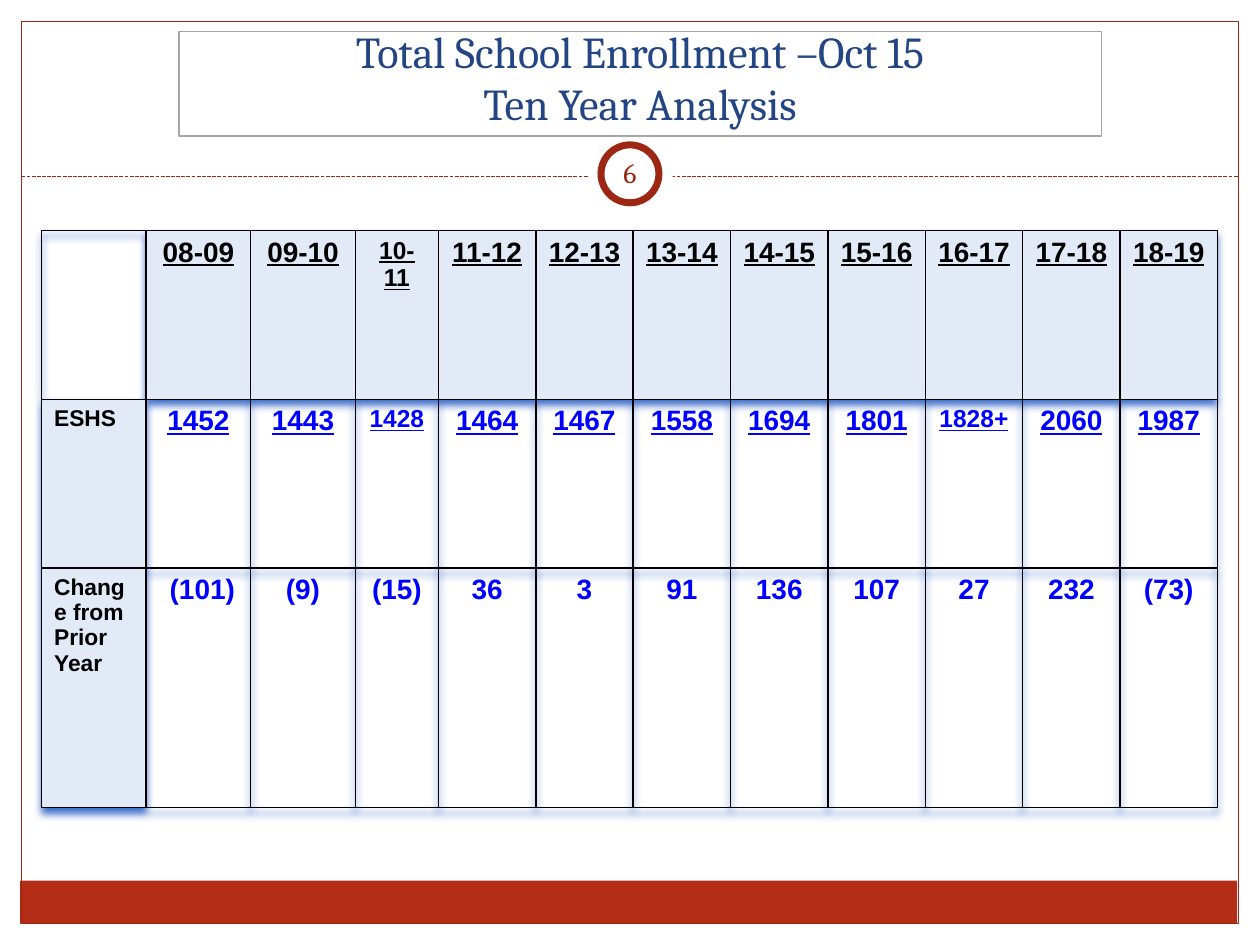
from dataclasses import dataclass

from lxml import etree
from pptx import Presentation
from pptx import util as u
from pptx.dml.color import RGBColor
from pptx.enum import dml, shapes, text
from pptx.oxml import parse_xml
from pptx.oxml.ns import nsdecls, qn

Inches, Pt = u.Inches, u.Pt


@dataclass(frozen=True)
class Theme:
    white: str = "FFFFFF"
    black: str = "000000"
    brick: str = "B32C16"
    rust: str = "9E2713"
    grey: str = "A6A6A6"
    navy: str = "244583"
    blue: str = "0000FF"
    pale: str = "E3EAF7"
    shadow: str = "3B6CC8"
    heading_font: str = "Cambria"
    table_font: str = "Arial"
    title: float = 25.2
    number: float = 16
    body: float = 16
    tight: float = 14
    label: float = 13


T = Theme()


def add_shape(kind, box, fill=None, line=None, width=0.75):
    s = slide.shapes.add_shape(kind, *(Inches(v) for v in box))
    s.shadow.inherit = False
    if fill:
        s.fill.solid()
        s.fill.fore_color.rgb = RGBColor.from_string(fill)
    else:
        s.fill.background()
    if line:
        s.line.color.rgb = RGBColor.from_string(line)
        s.line.width = Pt(width)
    else:
        s.line.fill.background()
    return s


def add_run(p, content, font, size, color, bold=False, underline=False):
    r = p.add_run()
    r.text = content
    r.font.name, r.font.size = font, Pt(size)
    r.font.bold, r.font.underline = bold, underline
    r.font.color.rgb = RGBColor.from_string(color)


prs = Presentation()
prs.slide_width, prs.slide_height = Inches(10), Inches(7.5)
slide = prs.slides.add_slide(prs.slide_layouts[6])
RECT, OVAL = shapes.MSO_SHAPE.RECTANGLE, shapes.MSO_SHAPE.OVAL

# Frame, footer bar and divider
add_shape(RECT, (0.16, 6.99, 9.66, 0.34), fill=T.brick)
add_shape(RECT, (0.17, 0.17, 9.66, 7.16), line=T.rust)
divider = slide.shapes.add_connector(
    shapes.MSO_CONNECTOR.STRAIGHT, Inches(0.17), Inches(1.4), Inches(9.83), Inches(1.4))
divider.line.color.rgb = RGBColor.from_string(T.rust)
divider.line.width = Pt(0.75)
divider.line.dash_style = dml.MSO_LINE.SQUARE_DOT
etree.SubElement(divider._element.spPr, qn("a:effectLst"))

# Page number badge
add_shape(OVAL, (4.67, 1.05, 0.67, 0.67), fill=T.white)
add_shape(OVAL, (4.77, 1.15, 0.46, 0.46), fill=T.white, line=T.rust, width=4)
number = slide.shapes.add_textbox(Inches(4.75), Inches(1.13), Inches(0.5), Inches(0.48))
tf = number.text_frame
tf.word_wrap = True
tf.vertical_anchor = text.MSO_ANCHOR.MIDDLE
tf.margin_left = tf.margin_right = tf.margin_top = tf.margin_bottom = Inches(0.05)
p = tf.paragraphs[0]
p.alignment = text.PP_ALIGN.CENTER
add_run(p, "6", T.heading_font, T.number, T.rust)

# Title
title = add_shape(RECT, (1.42, 0.25, 7.32, 0.83), line=T.grey)
tf = title.text_frame
tf.word_wrap = True
tf.vertical_anchor = text.MSO_ANCHOR.BOTTOM
p = tf.paragraphs[0]
p.alignment = text.PP_ALIGN.CENTER
add_run(p, "Total School Enrollment –Oct 15", T.heading_font, T.title, T.navy)
p.add_line_break()
add_run(p, "Ten Year Analysis", T.heading_font, T.title, T.navy)

# Enrollment table
rows = [
    ["", "08-09", "09-10", "10-11", "11-12", "12-13", "13-14",
     "14-15", "15-16", "16-17", "17-18", "18-19"],
    ["ESHS", "1452", "1443", "1428", "1464", "1467", "1558",
     "1694", "1801", "1828+", "2060", "1987"],
    ["Change from Prior Year", " (101)", "(9)", "(15)", "36", "3", "91",
     "136", "107", "27", "232", "(73)"],
]
tight_cells = {(0, 3), (1, 3), (1, 9)}
col_widths = [0.83] * 3 + [0.66] + [0.773] * 8
row_heights = [1.34, 1.34, 1.9]

table = slide.shapes.add_table(
    len(rows), len(col_widths), Inches(0.33), Inches(1.83), Inches(9.33), Inches(4.58)).table
table.first_row = table.horz_banding = False
for column, width in zip(table.columns, col_widths):
    column.width = Inches(width)
for row, height in zip(table.rows, row_heights):
    row.height = Inches(height)

tbl_pr = table._tbl.tblPr
tbl_pr.insert(0, parse_xml(
    f'<a:effectLst {nsdecls("a")}><a:outerShdw blurRad="50800" dist="38100" dir="5400000">'
    f'<a:srgbClr val="{T.shadow}"/></a:outerShdw></a:effectLst>'))

for i, row in enumerate(rows):
    for j, content in enumerate(row):
        cell = table.cell(i, j)
        is_label = j == 0
        if (i == 0) != is_label:
            cell.fill.solid()
            cell.fill.fore_color.rgb = RGBColor.from_string(T.pale)
        else:
            cell.fill.background()
        if i and not is_label:
            cell.fill.background()
        tc_pr = cell._tc.get_or_add_tcPr()
        for k, side in enumerate(("lnL", "lnR", "lnT", "lnB")):
            tc_pr.insert(k, parse_xml(
                f'<a:{side} {nsdecls("a")} w="12700"><a:solidFill>'
                f'<a:srgbClr val="{T.black}"/></a:solidFill></a:{side}>'))
        if not content:
            continue
        size = T.label if is_label else T.tight if (i, j) in tight_cells else T.body
        p = cell.text_frame.paragraphs[0]
        p.alignment = text.PP_ALIGN.LEFT if is_label else text.PP_ALIGN.CENTER
        p.space_before = Pt(round(0.2 * size, 1))
        add_run(p, content, T.table_font, size, T.black if i == 0 or is_label else T.blue,
                bold=True, underline=i < 2 and not is_label)

prs.save("out.pptx")
